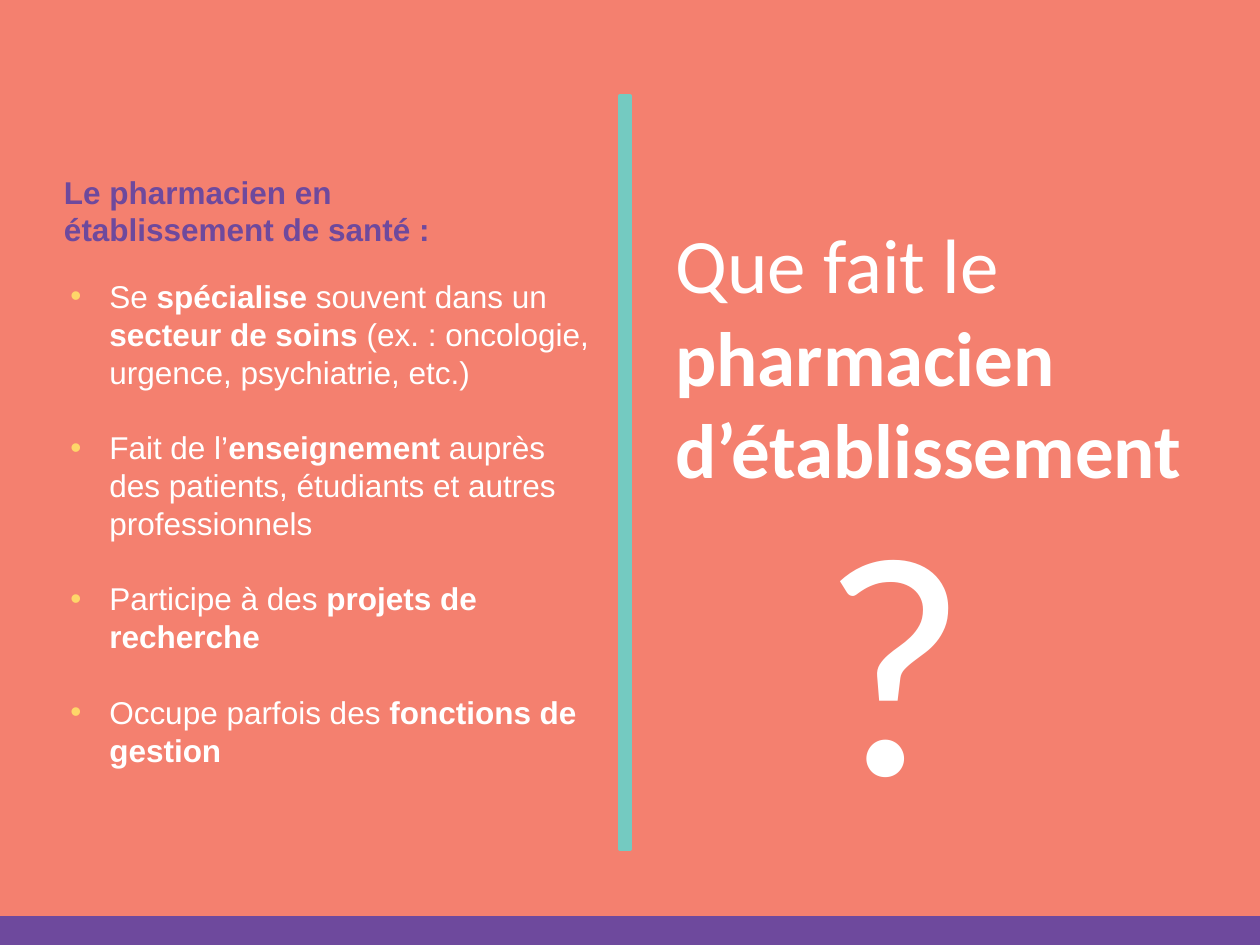
import dataclasses
import typing

import pptx
import pptx.dml.color
import pptx.enum.shapes
import pptx.enum.text
import pptx.oxml
import pptx.oxml.ns
import pptx.util

Inches = pptx.util.Inches
Pt = pptx.util.Pt
Runs = list[tuple[str, bool]]


@dataclasses.dataclass(frozen=True)
class Theme:
    coral: str = "F4806F"
    teal: str = "74CAC1"
    plum: str = "6E499D"
    gold: str = "FED669"
    white: str = "FFFFFF"
    body: int = 18
    title: int = 44
    mark: int = 180
    lead: float = 1.2


class Box(typing.NamedTuple):
    left: float
    top: float
    width: float
    height: float


class Bar(typing.NamedTuple):
    box: Box
    color: str


class Style(typing.NamedTuple):
    font: str
    size: int
    color: str


THEME = Theme()
BODY = Style("Arial", THEME.body, THEME.white)
HEAD = Style("Arial", THEME.body, THEME.plum)
TITLE = Style("Calibri", THEME.title, THEME.white)
MARK = Style("Calibri", THEME.mark, THEME.white)

BARS = [
    Bar(Box(0, 0, 10, 7.5), THEME.coral),
    Bar(Box(4.92, 0.76, 0.08, 5.98), THEME.teal),
    Bar(Box(0, 7.28, 10, 0.22), THEME.plum),
]
ROLES: list[Runs] = [
    [("Se ", False), ("spécialise", True), (" souvent dans un ", False),
     ("secteur de soins", True),
     (" (ex. : oncologie, urgence, psychiatrie, etc.)", False)],
    [("Fait de l’", False), ("enseignement", True),
     (" auprès des patients, étudiants et autres professionnels", False)],
    [("Participe à des ", False), ("projets de recherche", True)],
    [("Occupe parfois des ", False), ("fonctions de gestion", True)],
]


def rgb(color: str) -> pptx.dml.color.RGBColor:
    return pptx.dml.color.RGBColor.from_string(color)


def set_all(item, values: dict) -> None:
    for name, value in values.items():
        setattr(item, name, value)


def place(shape, box: Box) -> None:
    set_all(shape, {name: Inches(n) for name, n in box._asdict().items()})


def draw_bar(slide, bar: Bar) -> None:
    shape = slide.shapes.add_shape(
        pptx.enum.shapes.MSO_SHAPE.RECTANGLE, *map(Inches, bar.box))
    shape.shadow.inherit = False
    shape.fill.solid()
    shape.fill.fore_color.rgb = rgb(bar.color)
    shape.line.color.rgb = rgb(bar.color)
    shape.line.width = Pt(2)


def add_bullet(para) -> None:
    props = para._p.get_or_add_pPr()
    props.set("marL", str(Inches(0.31)))
    props.set("indent", str(-Inches(0.31)))
    space = pptx.oxml.ns.nsdecls("a")
    for xml in (
        f'<a:buClr {space}><a:srgbClr val="{THEME.gold}"/></a:buClr>',
        f'<a:buFont {space} typeface="Arial"/>',
        f'<a:buChar {space} char="•"/>',
    ):
        props.append(pptx.oxml.parse_xml(xml))


def write(shape, paras: list[Runs], style: Style, bullets: bool = False) -> None:
    frame = shape.text_frame
    set_all(frame, {
        "word_wrap": True,
        "auto_size": pptx.enum.text.MSO_AUTO_SIZE.NONE,
        "vertical_anchor": pptx.enum.text.MSO_ANCHOR.TOP,
    })
    pitch = Pt(style.size * THEME.lead)
    for i, runs in enumerate(paras):
        para = frame.add_paragraph() if i else frame.paragraphs[0]
        if bullets:
            add_bullet(para)
        set_all(para, {
            "alignment": pptx.enum.text.PP_ALIGN.LEFT,
            "line_spacing": pitch,
            "space_before": pitch if i else Pt(0),
        })
        for text, bold in runs:
            run = para.add_run()
            run.text = text
            set_all(run.font, {
                "name": style.font, "size": Pt(style.size), "bold": bold})
            run.font.color.rgb = rgb(style.color)


def add_text(slide, box: Box, paras: list[Runs], style: Style,
             bullets: bool = False) -> None:
    shape = slide.shapes.add_textbox(*map(Inches, box))
    write(shape, paras, style, bullets)


def add_title(slide, box: Box, runs: Runs) -> None:
    """Format the title and lift it above the shapes drawn so far."""
    title = slide.shapes.title
    place(title, box)
    write(title, [runs], TITLE)
    slide.shapes._spTree.append(title._element)


def main() -> None:
    deck = pptx.Presentation()
    set_all(deck, {"slide_width": Inches(10), "slide_height": Inches(7.5)})
    slide = deck.slides.add_slide(deck.slide_layouts[5])
    for bar in BARS:
        draw_bar(slide, bar)
    add_title(slide, Box(5.26, 1.67, 4.57, 2.32),
              [("Que fait le ", False), ("pharmacien d’établissement", True)])
    add_text(slide, Box(0.41, 1.32, 3.94, 0.71),
             [[("Le pharmacien en établissement de santé :", True)]], HEAD)
    add_text(slide, Box(0.46, 2.15, 4.33, 4.04), ROLES, BODY, bullets=True)
    add_text(slide, Box(6.42, 3.61, 1.34, 3.13), [[("?", False)]], MARK)
    deck.save("out.pptx")


if __name__ == "__main__":
    main()
